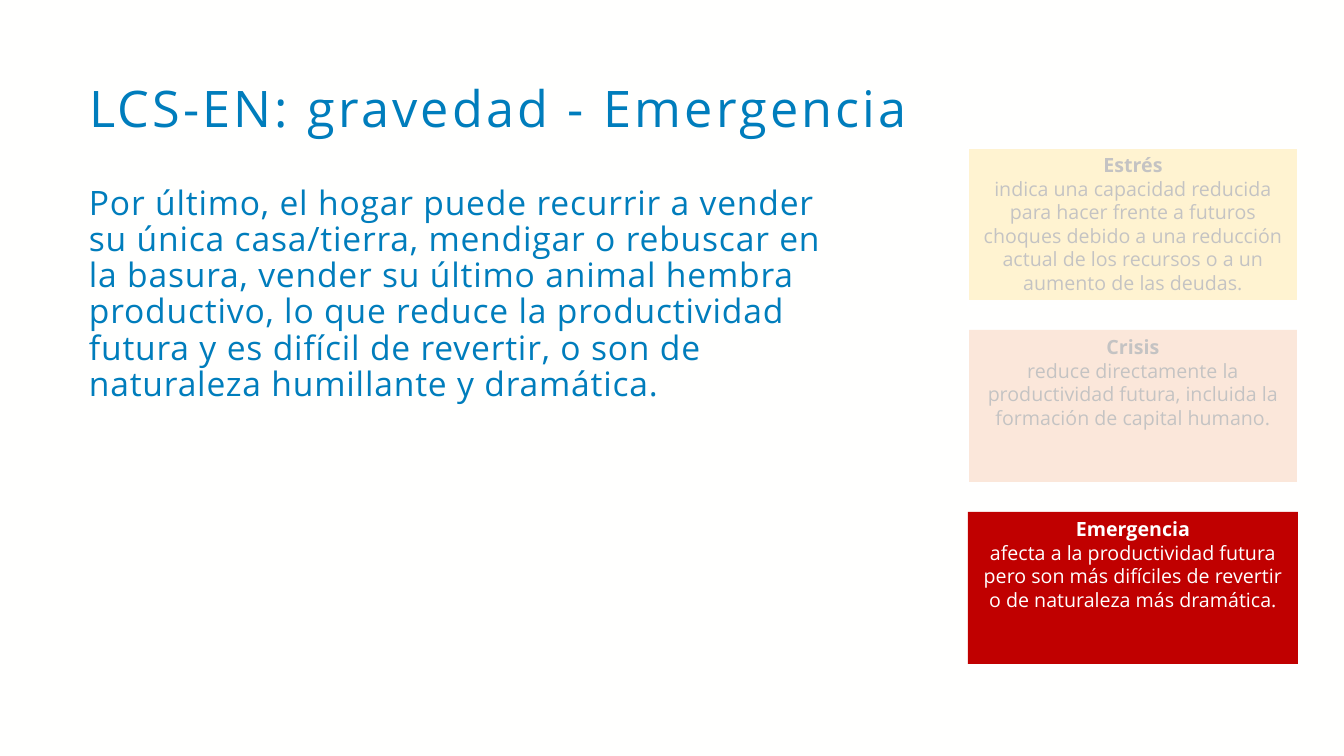
from lxml.etree import SubElement
from pptx import Presentation
from pptx.dml.color import RGBColor
from pptx.enum.shapes import MSO_SHAPE as Shape
from pptx.enum.text import MSO_ANCHOR as Anchor, MSO_AUTO_SIZE as AutoSize, PP_ALIGN as Align
from pptx.oxml.ns import qn
from pptx.util import Pt

TITLE = "LCS-EN: gravedad - Emergencia"
BODY = (
    "Por último, el hogar puede recurrir a vender su única casa/tierra, mendigar o "
    "rebuscar en la basura, vender su último animal hembra productivo, lo que reduce "
    "la productividad futura y es difícil de revertir, o son de naturaleza humillante "
    "y dramática."
)
# Severity level, description, fill, text colour
LEVELS = [
    ("Estrés", "indica una capacidad reducida para hacer frente a futuros choques "
     "debido a una reducción actual de los recursos o a un aumento de las deudas.",
     "FFD966", "3B3838"),
    ("Crisis", "reduce directamente la productividad futura, incluida la formación "
     "de capital humano.", "F4B183", "3B3838"),
    ("Emergencia", "afecta a la productividad futura pero son más difíciles de "
     "revertir o de naturaleza más dramática.", "C00000", "FFFFFF"),
]
FADED_LEVELS = 2
BLUE, WHITE, BACKGROUND = "007DBC", "FFFFFF", "FFFFFE"
FONT = "Open Sans"

SLIDE_SIZE = (1344, 756)
TITLE_BOX = (79, 79, 1218, 72)
BODY_BOX = (79, 181, 771, 430)
LEVEL_LEFT, LEVEL_TOP, LEVEL_WIDTH = 968, 148, 330
LEVEL_HEIGHT, LEVEL_STEP = 152, 182
VEIL_HEIGHT, VEIL_STEP = 158, 180
VEIL_OPACITY = 70
EMU_PER_PX = 914400 / 100.8


def px(length):
    return round(length * EMU_PER_PX)


def color(hex_string):
    return RGBColor.from_string(hex_string)


def write(paragraph, text, *, size, fill, bold=False, tracking=0,
          align=Align.LEFT, line_spacing=1.0):
    """Add one formatted run; tracking is the letter spacing in points."""
    paragraph.alignment = align
    paragraph.line_spacing = line_spacing
    paragraph.space_before = Pt(0)
    run = paragraph.add_run()
    run.text = text
    run.font.name = FONT
    run.font.size = Pt(size)
    run.font.bold = bold
    run.font.color.rgb = color(fill)
    if tracking:
        run.font._element.set("spc", str(round(tracking * 100)))


def prepare_frame(shape):
    frame = shape.text_frame
    frame.word_wrap = True
    frame.auto_size = AutoSize.NONE
    frame.vertical_anchor = Anchor.TOP
    return frame


def add_rectangle(slide, top, height, fill):
    shape = slide.shapes.add_shape(
        Shape.RECTANGLE, px(LEVEL_LEFT), px(top), px(LEVEL_WIDTH), px(height))
    shape.shadow.inherit = False
    shape.fill.solid()
    shape.fill.fore_color.rgb = color(fill)
    shape.line.fill.background()
    return shape


def add_level(slide, top, name, description, fill, text_color):
    frame = prepare_frame(add_rectangle(slide, top, LEVEL_HEIGHT, fill))
    style = dict(size=14, fill=text_color, align=Align.CENTER)
    write(frame.paragraphs[0], name, bold=True, **style)
    write(frame.add_paragraph(), description, **style)


def add_veil(slide, top):
    """Cover a level with translucent white so that it recedes."""
    veil = add_rectangle(slide, top, VEIL_HEIGHT, WHITE)
    fill_color = veil._element.spPr.find(qn("a:solidFill")).find(qn("a:srgbClr"))
    SubElement(fill_color, qn("a:alpha"), val=str(VEIL_OPACITY * 1000))
    veil.line.color.rgb = color(WHITE)
    veil.line.width = Pt(1)


def main():
    presentation = Presentation()
    presentation.slide_width, presentation.slide_height = map(px, SLIDE_SIZE)
    slide = presentation.slides.add_slide(presentation.slide_layouts[5])
    slide.background.fill.solid()
    slide.background.fill.fore_color.rgb = color(BACKGROUND)

    title = slide.shapes.title
    title.left, title.top, title.width, title.height = map(px, TITLE_BOX)
    write(prepare_frame(title).paragraphs[0], TITLE, size=36, fill=BLUE,
          tracking=2.3, line_spacing=0.9)

    body = slide.shapes.add_textbox(*map(px, BODY_BOX))
    write(prepare_frame(body).paragraphs[0], BODY, size=24, fill=BLUE,
          tracking=0.6, line_spacing=0.9)

    for index, level in enumerate(LEVELS):
        add_level(slide, LEVEL_TOP + index * LEVEL_STEP, *level)
    for index in range(FADED_LEVELS):
        add_veil(slide, LEVEL_TOP + index * VEIL_STEP)

    presentation.save("out.pptx")


if __name__ == "__main__":
    main()
